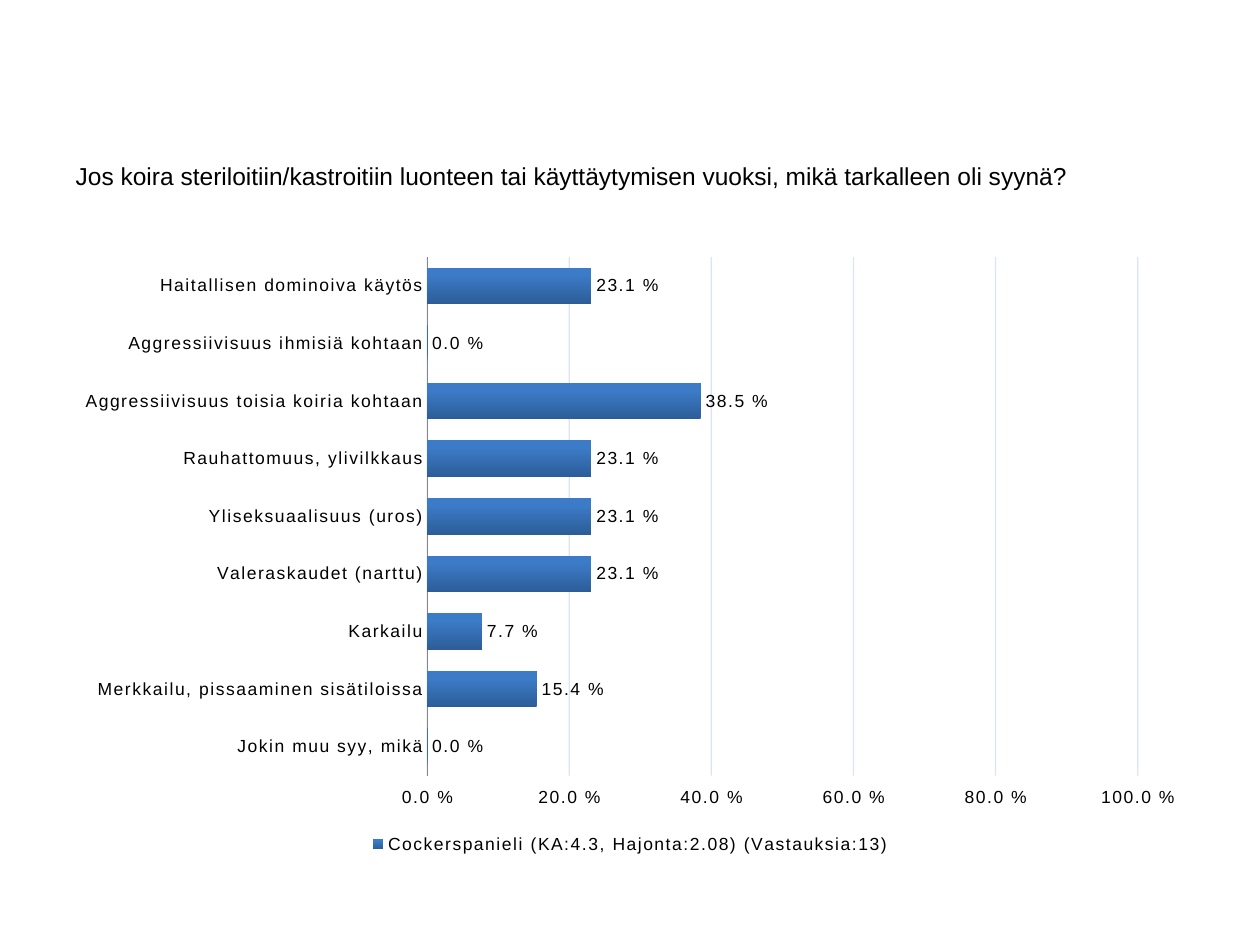
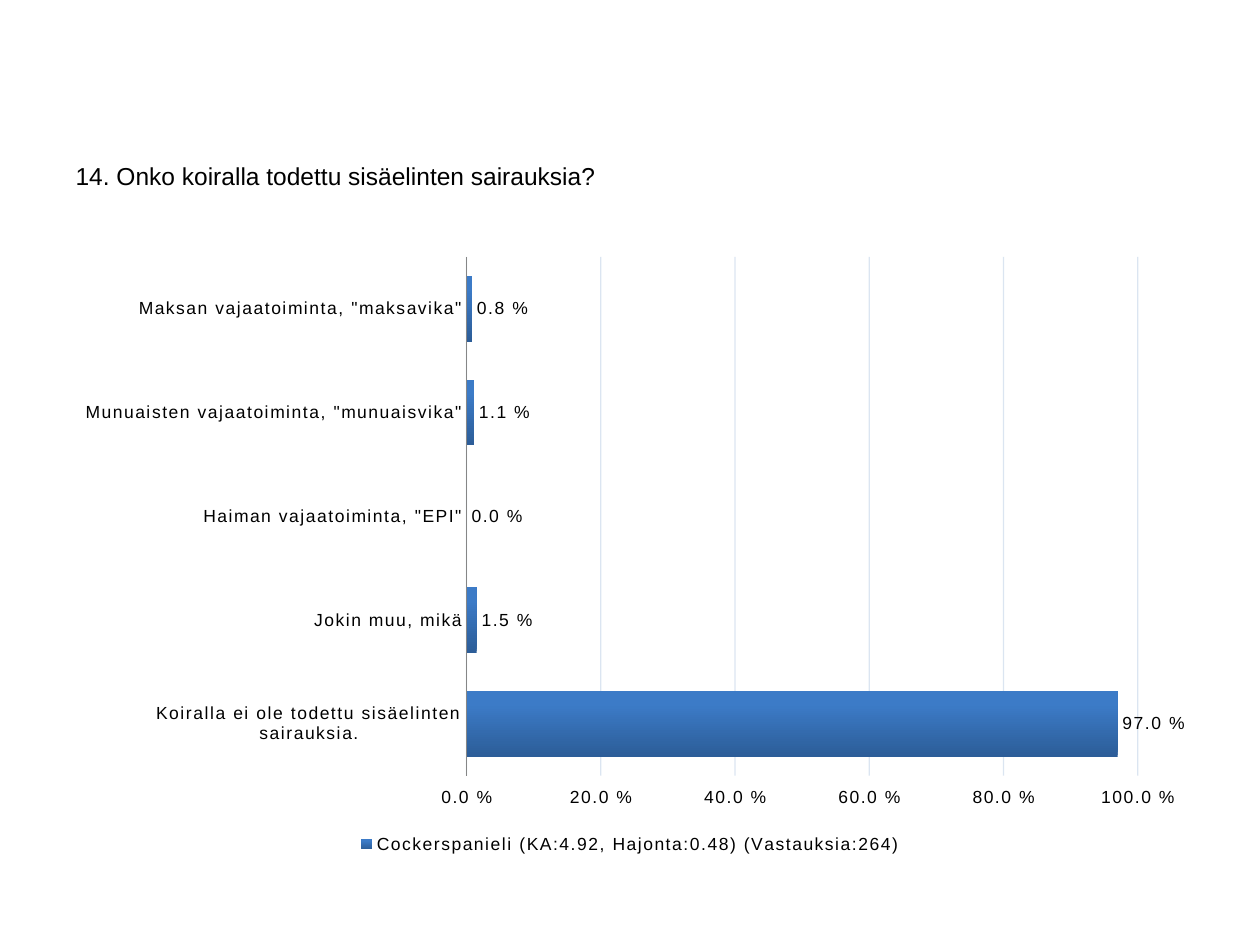
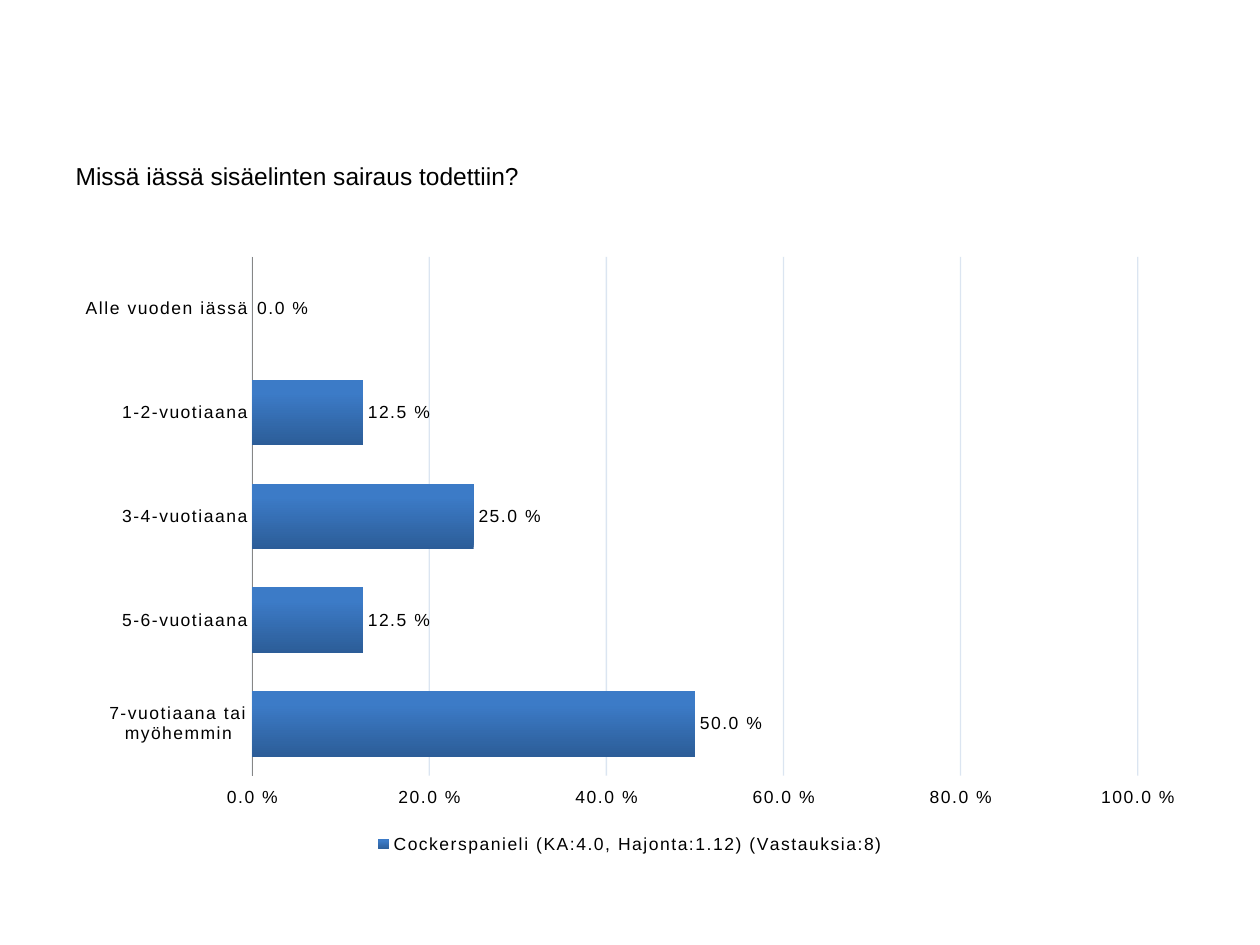
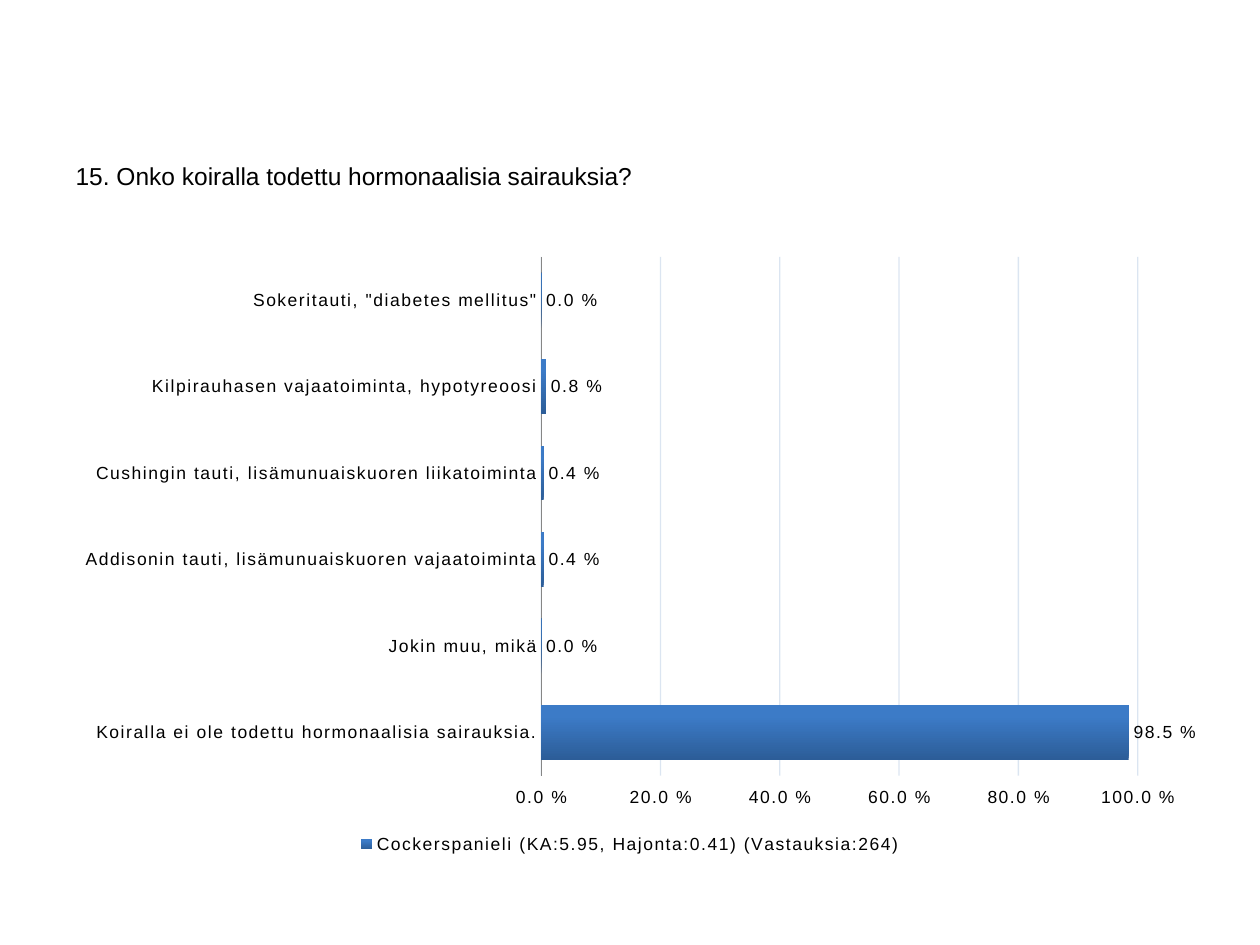
from pptx import Presentation
from pptx.chart.data import CategoryChartData
from pptx.dml.color import RGBColor
from pptx.enum.chart import (XL_CHART_TYPE, XL_LABEL_POSITION, XL_LEGEND_POSITION,
                             XL_TICK_LABEL_POSITION, XL_TICK_MARK)
from pptx.enum.text import MSO_ANCHOR
from pptx.oxml.ns import qn
from pptx.util import Inches, Pt
from lxml.etree import SubElement

# Shared style
COLORS = {"text": "000000", "grid": "4F81BD", "axis": "868686",
          "dark": "2C5D98", "light": "3C7BC7"}
FACE = "Arial"
PERCENT = r"0.0\ %"
WIDE, HIGH = Inches(10), Inches(7.5)
LEFT, SPAN = 0.05, 0.9            # shares of the slide width
HEAD_TOP, HEAD_TALL = 0.164, 0.079  # shares of the slide height
PLOT_TOP, PLOT_TALL = 0.259, 0.65

# Heading, series name, and share of answers by category
SLIDES = [
    ("Jos koira steriloitiin/kastroitiin luonteen tai käyttäytymisen vuoksi, "
     "mikä tarkalleen oli syynä?",
     "Cockerspanieli (KA:4.3, Hajonta:2.08) (Vastauksia:13)",
     {"Haitallisen dominoiva käytös": 0.231,
      "Aggressiivisuus ihmisiä kohtaan": 0,
      "Aggressiivisuus toisia koiria kohtaan": 0.385,
      "Rauhattomuus, ylivilkkaus": 0.231,
      "Yliseksuaalisuus (uros)": 0.231,
      "Valeraskaudet (narttu)": 0.231,
      "Karkailu": 0.077,
      "Merkkailu, pissaaminen sisätiloissa": 0.154,
      "Jokin muu syy, mikä": 0}),
    ("14. Onko koiralla todettu sisäelinten sairauksia?",
     "Cockerspanieli (KA:4.92, Hajonta:0.48) (Vastauksia:264)",
     {'Maksan vajaatoiminta, "maksavika"': 0.008,
      'Munuaisten vajaatoiminta, "munuaisvika"': 0.011,
      'Haiman vajaatoiminta, "EPI"': 0,
      "Jokin muu, mikä": 0.015,
      "Koiralla ei ole todettu sisäelinten sairauksia.": 0.97}),
    ("Missä iässä sisäelinten sairaus todettiin?",
     "Cockerspanieli (KA:4.0, Hajonta:1.12) (Vastauksia:8)",
     {"Alle vuoden iässä": 0,
      "1-2-vuotiaana": 0.125,
      "3-4-vuotiaana": 0.25,
      "5-6-vuotiaana": 0.125,
      "7-vuotiaana tai myöhemmin": 0.5}),
    ("15. Onko koiralla todettu hormonaalisia sairauksia?",
     "Cockerspanieli (KA:5.95, Hajonta:0.41) (Vastauksia:264)",
     {'Sokeritauti, "diabetes mellitus"': 0,
      "Kilpirauhasen vajaatoiminta, hypotyreoosi": 0.008,
      "Cushingin tauti, lisämunuaiskuoren liikatoiminta": 0.004,
      "Addisonin tauti, lisämunuaiskuoren vajaatoiminta": 0.004,
      "Jokin muu, mikä": 0,
      "Koiralla ei ole todettu hormonaalisia sairauksia.": 0.985}),
]


def color(name):
    return RGBColor.from_string(COLORS[name])


def area(top, tall):
    """Full-width box at the given shares of the slide height."""
    return int(LEFT * WIDE), int(top * HIGH), int(SPAN * WIDE), int(tall * HIGH)


def style(font, size):
    font.name = FACE
    font.size = Pt(size)
    font.bold = False
    font.color.rgb = color("text")


def add_head(slide, text):
    title, body = slide.placeholders
    title.element.getparent().remove(title.element)
    body.left, body.top, body.width, body.height = area(HEAD_TOP, HEAD_TALL)
    frame = body.text_frame
    frame.text = text
    frame.vertical_anchor = MSO_ANCHOR.TOP
    style(frame.paragraphs[0].font, 14)


def set_axes(chart):
    cats, vals = chart.category_axis, chart.value_axis
    for axis in (cats, vals):
        axis.major_tick_mark = axis.minor_tick_mark = XL_TICK_MARK.NONE
        style(axis.tick_labels.font, 10)
    # Categories run downwards, with the value scale below them
    cats.reverse_order = True
    cats.format.line.color.rgb = color("axis")
    vals.tick_label_position = XL_TICK_LABEL_POSITION.HIGH
    vals.minimum_scale, vals.maximum_scale, vals.major_unit = 0, 1, 0.2
    vals.tick_labels.number_format = PERCENT
    vals.tick_labels.number_format_is_linked = False
    vals.format.line.fill.background()
    # Faint grid lines
    line = vals.major_gridlines.format.line
    line.width = Pt(0.75)
    line.color.rgb = color("grid")
    for tint in vals.major_gridlines._xAx.iter(qn("a:srgbClr")):
        if tint.get("val") == COLORS["grid"]:
            SubElement(tint, qn("a:alpha"), val="20000")


def set_bars(plot):
    plot.gap_width = 58
    plot.vary_by_categories = False
    fill = plot.series[0].format.fill
    fill.gradient()
    fill.gradient_angle = 90
    for stop, name, spot in zip(fill.gradient_stops, ("dark", "light"), (0, 0.8)):
        stop.color.rgb = color(name)
        stop.position = spot
    labels = plot.series[0].data_labels
    labels.show_value = True
    labels.position = XL_LABEL_POSITION.OUTSIDE_END
    labels.number_format = PERCENT
    labels.number_format_is_linked = False
    style(labels.font, 10)


def add_bars(slide, name, shares):
    data = CategoryChartData(number_format=PERCENT)
    data.categories = list(shares)
    data.add_series(name, list(shares.values()))
    chart = slide.shapes.add_chart(XL_CHART_TYPE.BAR_CLUSTERED,
                                   *area(PLOT_TOP, PLOT_TALL), data).chart
    chart.has_title = False
    style(chart.font, 10)
    chart.font.name = "Calibri"
    chart.has_legend = True
    chart.legend.position = XL_LEGEND_POSITION.BOTTOM
    chart.legend.include_in_layout = False
    style(chart.legend.font, 10)
    set_axes(chart)
    set_bars(chart.plots[0])
    # Letter spacing throughout the chart
    for font in chart._chartSpace.iter(qn("a:defRPr")):
        font.set("spc", "100")


def main():
    deck = Presentation()
    deck.slide_width, deck.slide_height = WIDE, HIGH
    layout = deck.slide_layouts.get_by_name("Section Header")
    for head, name, shares in SLIDES:
        slide = deck.slides.add_slide(layout)
        add_head(slide, head)
        add_bars(slide, name, shares)
    deck.save("out.pptx")


if __name__ == "__main__":
    main()
